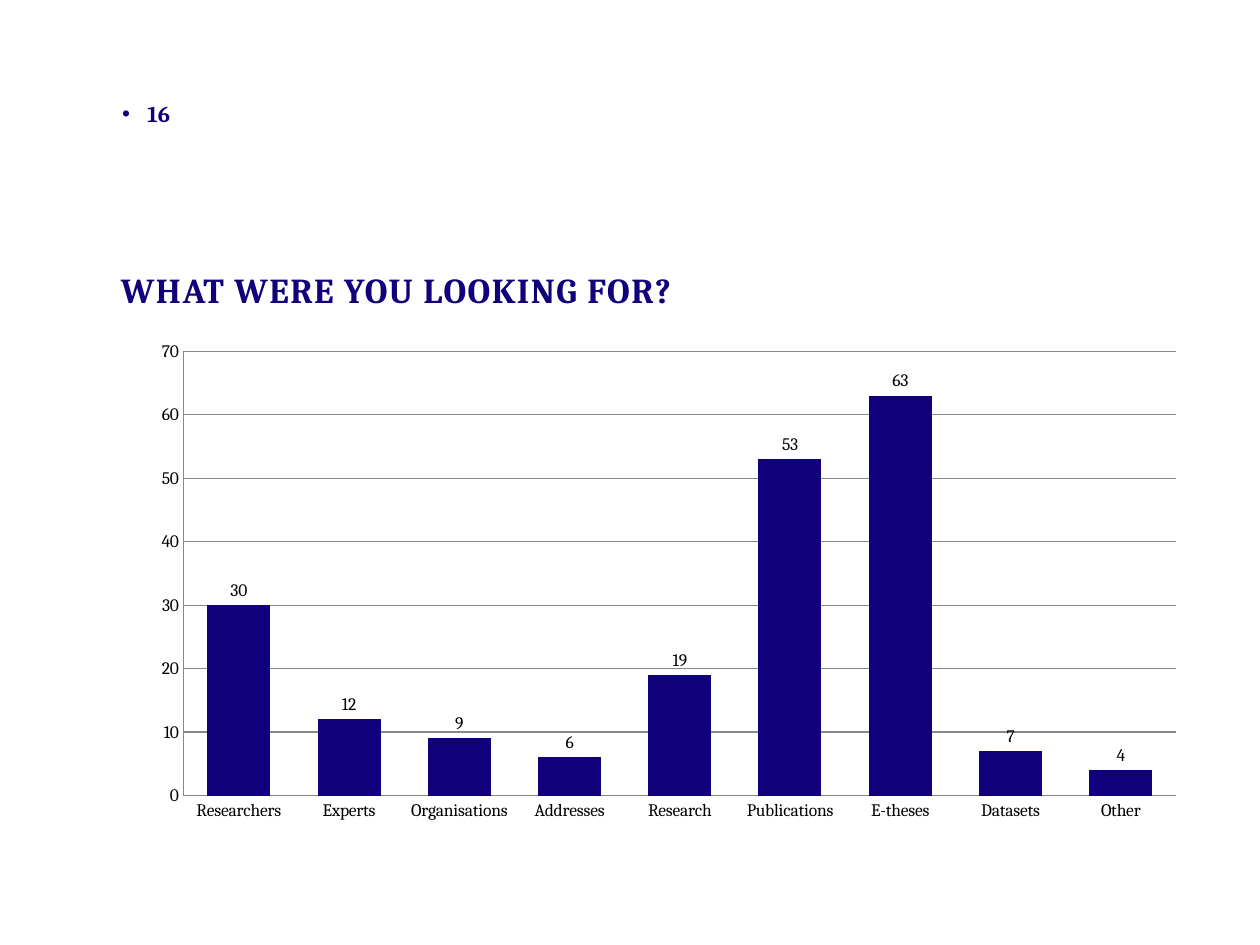
from lxml import etree
from pptx import Presentation
from pptx.chart.data import CategoryChartData
from pptx.dml.color import RGBColor
from pptx.enum.chart import XL_CHART_TYPE as ChartType
from pptx.enum.chart import XL_LABEL_POSITION as LabelPosition
from pptx.enum.chart import XL_TICK_MARK as TickMark
from pptx.enum.text import MSO_ANCHOR, PP_ALIGN
from pptx.oxml import parse_xml
from pptx.oxml.ns import nsdecls, qn
from pptx.util import Inches, Pt

TITLE = "WHAT WERE YOU LOOKING FOR?"
NUMBER = "16"
ANSWERS = {
    "Researchers": 30,
    "Experts": 12,
    "Organisations": 9,
    "Addresses": 6,
    "Research": 19,
    "Publications": 53,
    "E-theses": 63,
    "Datasets": 7,
    "Other": 4,
}
PLOT_AREA = {"x": 0.057, "y": 0.02, "w": 0.92, "h": 0.886}
COLORS = {"navy": "10007B", "black": "000000", "grey": "888888"}
FONT = "Cambria"


def color(name):
    return RGBColor.from_string(COLORS[name])


def style_font(font, size, color_name, bold=False):
    font.name, font.size, font.bold = FONT, Pt(size), bold
    font.color.rgb = color(color_name)


def prepare_frame(shape, wrap):
    frame = shape.text_frame
    frame.margin_left = frame.margin_top = 0
    frame.margin_right = frame.margin_bottom = 0
    frame.word_wrap = wrap
    frame.vertical_anchor = MSO_ANCHOR.TOP
    paragraph = frame.paragraphs[0]
    paragraph.alignment = PP_ALIGN.LEFT
    return paragraph


def add_title(slide):
    title = slide.shapes.title
    title.left, title.top = Inches(0.96), Inches(2.02)
    title.width, title.height = Inches(8.56), Inches(0.56)
    paragraph = prepare_frame(title, wrap=False)
    paragraph.line_spacing = Pt(32)
    run = paragraph.add_run()
    run.text = TITLE
    style_font(run.font, 20, "navy", bold=True)
    run.font._element.set("spc", "80")


def add_number(slide):
    box = slide.shapes.add_textbox(Inches(0.97), Inches(0.79), Inches(0.54), Inches(0.52))
    paragraph = prepare_frame(box, wrap=True)
    properties = paragraph._p.get_or_add_pPr()
    properties.set("marL", str(Inches(0.2)))
    properties.set("indent", str(Inches(-0.2)))
    bullet_font = etree.SubElement(properties, qn("a:buFont"))
    bullet_font.set("typeface", "Arial")
    etree.SubElement(properties, qn("a:buChar")).set("char", "•")
    run = paragraph.add_run()
    run.text = NUMBER
    style_font(run.font, 13, "navy", bold=True)


def set_plot_area(chart):
    """Fix the inner plot area as fractions of the chart."""
    plot_area = chart._chartSpace.chart.plotArea
    for layout in plot_area.findall(qn("c:layout")):
        plot_area.remove(layout)
    modes = '<c:xMode val="edge"/><c:yMode val="edge"/>'
    sizes = "".join(f'<c:{key} val="{value}"/>' for key, value in PLOT_AREA.items())
    plot_area.insert(0, parse_xml(
        f'<c:layout {nsdecls("c")}><c:manualLayout><c:layoutTarget val="inner"/>'
        f"{modes}{sizes}</c:manualLayout></c:layout>"))


def add_answer_chart(slide):
    data = CategoryChartData(number_format="0")
    data.categories = list(ANSWERS)
    data.add_series("Series 1", list(ANSWERS.values()))
    chart = slide.shapes.add_chart(
        ChartType.COLUMN_CLUSTERED, Inches(0.97), Inches(2.71),
        Inches(8.56), Inches(3.98), data).chart
    chart.has_title = chart.has_legend = False
    style_font(chart.font, 10, "black")
    set_plot_area(chart)

    for axis in (chart.category_axis, chart.value_axis):
        axis.major_tick_mark = axis.minor_tick_mark = TickMark.NONE
        axis.format.line.color.rgb = color("grey")
        axis.format.line.width = Pt(0.75)
    value_axis = chart.value_axis
    value_axis.minimum_scale, value_axis.maximum_scale = 0, 70
    value_axis.major_unit = 10
    value_axis.tick_labels.number_format = "0"
    value_axis.tick_labels.number_format_is_linked = False
    value_axis.has_major_gridlines = True
    gridline = value_axis.major_gridlines.format.line
    gridline.color.rgb, gridline.width = color("grey"), Pt(0.75)

    plot = chart.plots[0]
    plot.vary_by_categories = False
    plot.gap_width, plot.overlap = 75, 40
    series = plot.series[0]
    series.format.fill.solid()
    series.format.fill.fore_color.rgb = color("navy")
    labels = series.data_labels
    labels.show_value = True
    labels.position = LabelPosition.OUTSIDE_END
    labels.number_format, labels.number_format_is_linked = "0", False
    style_font(labels.font, 10, "black")


def main():
    presentation = Presentation()
    presentation.slide_width, presentation.slide_height = Inches(10), Inches(7.5)
    slide = presentation.slides.add_slide(presentation.slide_layouts[5])
    add_title(slide)
    add_number(slide)
    add_answer_chart(slide)
    presentation.save("out.pptx")


if __name__ == "__main__":
    main()
